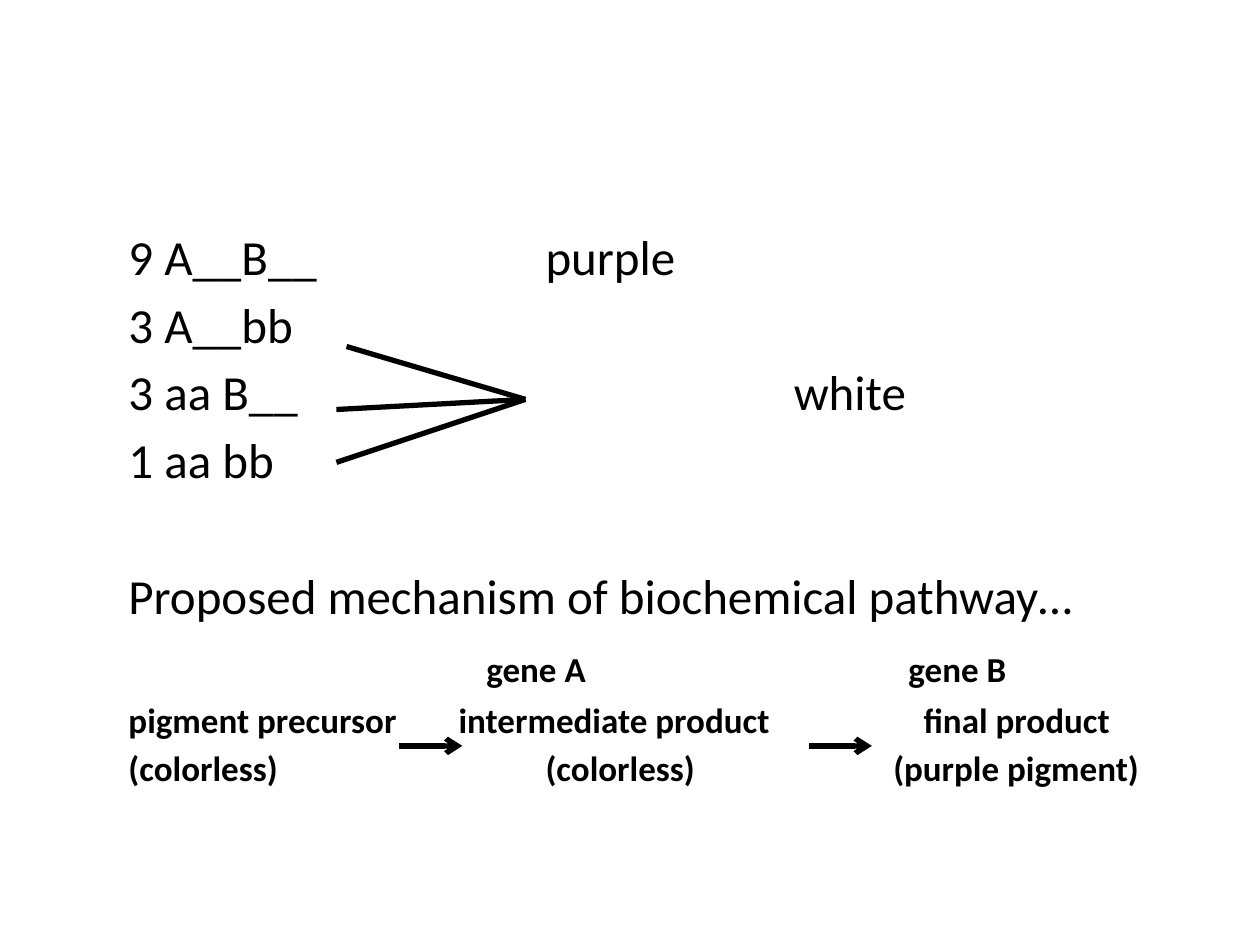
from lxml.etree import SubElement
from pptx import Presentation
from pptx.dml.color import RGBColor
from pptx.enum.shapes import MSO_CONNECTOR
from pptx.oxml.ns import qn
from pptx.util import Inches, Pt

COLORS = {"ink": "000000", "background": "FFFFFF"}
FONT = "Calibri"
LARGE, SMALL = 28, 20
TEXT_LEFT = 1.02
BODY = (0.42, 1.75, 9.17, 5.33)

# Each line: tab size, text size, bold, space before, [(left, text)]
LINES = [
    (LARGE, LARGE, False, 5, [(TEXT_LEFT, "9 A__B__"), (4.33, "purple")]),
    (LARGE, LARGE, False, 5, [(TEXT_LEFT, "3 A__bb")]),
    (LARGE, LARGE, False, 5, [(TEXT_LEFT, "3 aa B__"), (6.3, "white")]),
    (LARGE, LARGE, False, 5, [(TEXT_LEFT, "1 aa bb")]),
    (LARGE, LARGE, False, 44.3, [(TEXT_LEFT, "Proposed mechanism of biochemical pathway…")]),
    (LARGE, SMALL, True, 5, [(3.86, "gene A"), (7.21, "gene B")]),
    (SMALL, SMALL, True, 3.6, [(TEXT_LEFT, "pigment precursor"),
                               (3.64, "intermediate product"), (7.33, "final product")]),
    (SMALL, SMALL, True, 3.6, [(TEXT_LEFT, "(colorless)"),
                               (4.33, "(colorless)"), (7.09, "(purple pigment)")]),
]
WHITE_POINT = (4.17, 3.17)
BRACKET_STARTS = [(2.75, 2.75), (2.67, 3.67), (2.67, 3.25)]
ARROW_LEFTS = [3.17, 6.42]
ARROW_Y, ARROW_LENGTH = 5.92, 0.5


def color(name):
    return RGBColor.from_string(COLORS[name])


def add_run(paragraph, text, size, bold):
    run = paragraph.add_run()
    run.text = text
    run.font.name = FONT
    run.font.size = Pt(size)
    run.font.bold = bold
    run.font.color.rgb = color("ink")


def add_text(slide):
    frame = slide.shapes.add_textbox(*map(Inches, BODY)).text_frame
    frame.word_wrap = True
    frame.margin_left = Inches(TEXT_LEFT - BODY[0])
    for index, (tab_size, size, bold, before, cells) in enumerate(LINES):
        paragraph = frame.add_paragraph() if index else frame.paragraphs[0]
        paragraph.space_before = Pt(before if index else 0)
        stops = SubElement(paragraph._p.get_or_add_pPr(), qn("a:tabLst"))
        for left, text in cells:
            if left > TEXT_LEFT:
                SubElement(stops, qn("a:tab"), pos=str(Inches(left - TEXT_LEFT)), algn="l")
                add_run(paragraph, "\t", tab_size, bold)
            add_run(paragraph, text, size, bold)


def add_line(slide, start, end, arrow=False):
    connector = slide.shapes.add_connector(
        MSO_CONNECTOR.STRAIGHT, *map(Inches, (*start, *end)))
    connector.line.color.rgb = color("ink")
    connector.line.width = Pt(3)
    if arrow:
        SubElement(connector.line._get_or_add_ln(), qn("a:tailEnd"), type="arrow")
    SubElement(connector._element.spPr, qn("a:effectLst"))


def main():
    presentation = Presentation()
    presentation.slide_width, presentation.slide_height = Inches(10), Inches(7.5)
    slide = presentation.slides.add_slide(presentation.slide_layouts[6])
    slide.background.fill.solid()
    slide.background.fill.fore_color.rgb = color("background")
    add_text(slide)
    for start in BRACKET_STARTS:
        add_line(slide, start, WHITE_POINT)
    for left in ARROW_LEFTS:
        add_line(slide, (left, ARROW_Y), (left + ARROW_LENGTH, ARROW_Y), arrow=True)
    presentation.save("out.pptx")


if __name__ == "__main__":
    main()
